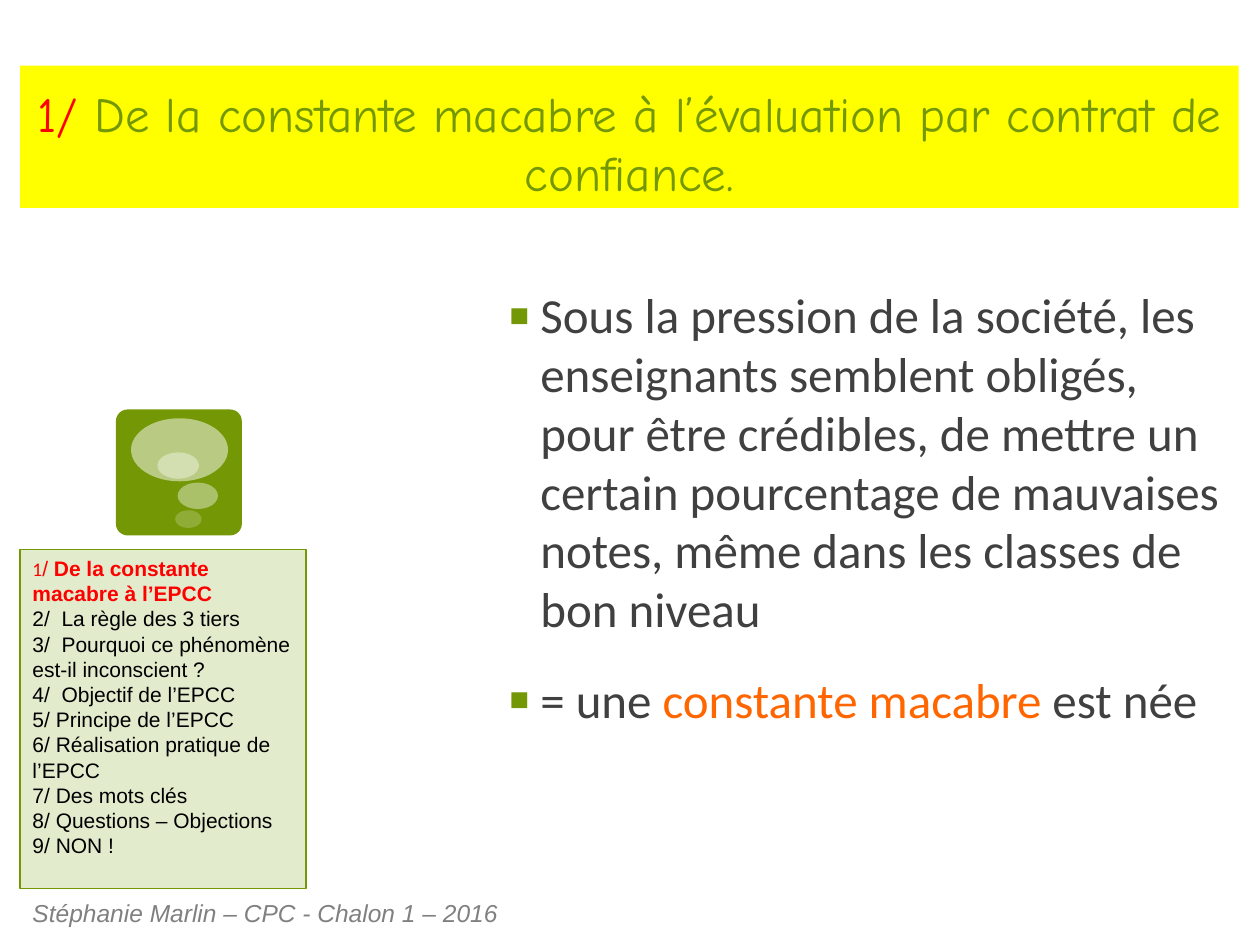
from dataclasses import dataclass

from lxml.etree import SubElement
from pptx import Presentation
from pptx.dml.color import RGBColor as RGB
from pptx.enum.shapes import MSO_SHAPE as Shape
from pptx.enum.text import MSO_ANCHOR as Anchor, MSO_AUTO_SIZE as AutoSize, PP_ALIGN as Align
from pptx.oxml.ns import qn
from pptx.util import Inches, Pt


@dataclass(frozen=True)
class Theme:
    green: RGB = RGB(0x74, 0x98, 0x05)
    pale_green: RGB = RGB(0xE3, 0xEB, 0xCD)
    yellow: RGB = RGB(0xFF, 0xFF, 0x00)
    red: RGB = RGB(0xFF, 0x00, 0x00)
    orange: RGB = RGB(0xFF, 0x66, 0x00)
    dark: RGB = RGB(0x40, 0x40, 0x40)
    grey: RGB = RGB(0x80, 0x80, 0x80)
    black: RGB = RGB(0, 0, 0)
    white: RGB = RGB(0xFF, 0xFF, 0xFF)
    title_font: str = "Comic Neue"
    body_font: str = "Calibri"
    small_font: str = "Arial"
    large: int = 28
    footer: int = 14
    agenda: int = 12
    agenda_number: int = 11


THEME = Theme()

AGENDA = [
    "2/  La règle des 3 tiers",
    "3/  Pourquoi ce phénomène est-il inconscient ?",
    "4/  Objectif de l’EPCC",
    "5/ Principe de l’EPCC",
    "6/ Réalisation pratique de l’EPCC",
    "7/ Des mots clés",
    "8/ Questions – Objections",
    "9/ NON !",
]
POINTS = [
    [("Sous la pression de la société, les enseignants semblent obligés, pour être "
      "crédibles, de mettre un certain pourcentage de mauvaises notes, même dans les "
      "classes de bon niveau", THEME.dark)],
    [("= une ", THEME.dark), ("constante macabre ", THEME.orange), ("est née", THEME.dark)],
]


def inches(box):
    return [Inches(length) for length in box]


def add_run(paragraph, text, font, size, color, bold=False, italic=False):
    run = paragraph.add_run()
    run.text = text
    run.font.name, run.font.size = font, Pt(size)
    run.font.bold, run.font.italic = bold, italic
    run.font.color.rgb = color


def paragraphs(frame, count):
    """Return the frame's first paragraph followed by new ones, count in all."""
    return [frame.paragraphs[0]] + [frame.add_paragraph() for _ in range(count - 1)]


def add_filled(slide, kind, box, color, opacity=100):
    shape = slide.shapes.add_shape(kind, *inches(box))
    shape.shadow.inherit = False
    shape.fill.solid()
    shape.fill.fore_color.rgb = color
    shape.line.fill.background()
    if opacity < 100:
        solid = shape.fill._xPr.find(qn("a:solidFill"))
        SubElement(solid[0], qn("a:alpha"), val=str(opacity * 1000))
    return shape


def add_bullet(paragraph, color):
    props = paragraph._p.get_or_add_pPr()
    props.set("marL", str(Inches(0.25)))
    props.set("indent", str(-Inches(0.25)))
    bullet_color = SubElement(props, qn("a:buClr"))
    SubElement(bullet_color, qn("a:srgbClr"), val=str(color))
    SubElement(props, qn("a:buSzPct"), val="130000")
    SubElement(props, qn("a:buFont"), typeface="Arial")
    SubElement(props, qn("a:buChar"), char="▪")


def place_title(slide, box):
    title = slide.shapes.title
    title.left, title.top, title.width, title.height = inches(box)
    title.fill.solid()
    title.fill.fore_color.rgb = THEME.yellow
    frame = title.text_frame
    frame.vertical_anchor = Anchor.BOTTOM
    frame.auto_size = AutoSize.NONE
    heading = frame.paragraphs[0]
    heading.alignment = Align.CENTER
    for text, color in [
        ("1/ ", THEME.red),
        ("De la constante macabre à l’évaluation par contrat de confiance.", THEME.green),
    ]:
        add_run(heading, text, THEME.title_font, THEME.large, color)


def add_bubble_icon(slide, box):
    left, top, side, _ = box
    tile = add_filled(slide, Shape.ROUNDED_RECTANGLE, box, THEME.green)
    tile.adjustments[0] = 0.093
    bubbles = [  # x, y, width, height as shares of the tile, then opacity
        (0.12, 0.07, 0.77, 0.5, 50),
        (0.49, 0.58, 0.32, 0.21, 40),
        (0.47, 0.8, 0.21, 0.14, 20),
        (0.33, 0.34, 0.33, 0.21, 38),
    ]
    for x, y, width, height, opacity in bubbles:
        bubble = (left + x * side, top + y * side, width * side, height * side)
        add_filled(slide, Shape.OVAL, bubble, THEME.white, opacity)


def add_points(slide, box):
    frame = slide.shapes.add_textbox(*inches(box)).text_frame
    frame.word_wrap = True
    for paragraph, parts in zip(paragraphs(frame, len(POINTS)), POINTS):
        paragraph.space_before = Pt(18)
        add_bullet(paragraph, THEME.green)
        for text, color in parts:
            add_run(paragraph, text, THEME.body_font, THEME.large, color)


def add_footer(slide, box):
    frame = slide.shapes.add_textbox(*inches(box)).text_frame
    frame.word_wrap = True
    add_run(frame.paragraphs[0], "Stéphanie Marlin – CPC - Chalon 1 – 2016",
            THEME.small_font, THEME.footer, THEME.grey, italic=True)


def add_agenda(slide, box):
    panel = add_filled(slide, Shape.RECTANGLE, box, THEME.pale_green)
    panel.line.color.rgb = THEME.green
    panel.line.width = Pt(0.75)
    frame = panel.text_frame
    frame.word_wrap = True
    frame.vertical_anchor = Anchor.TOP
    current, *others = paragraphs(frame, len(AGENDA) + 1)
    current.alignment = Align.LEFT
    add_run(current, "1", THEME.body_font, THEME.agenda_number, THEME.red)
    add_run(current, "/ ", THEME.small_font, THEME.agenda, THEME.red)
    add_run(current, "De la constante macabre à l’EPCC",
            THEME.small_font, THEME.agenda, THEME.red, bold=True)
    for paragraph, text in zip(others, AGENDA):
        paragraph.alignment = Align.LEFT
        add_run(paragraph, text, THEME.small_font, THEME.agenda, THEME.black)


def main():
    deck = Presentation()
    deck.slide_width, deck.slide_height = Inches(10), Inches(7.5)
    slide = deck.slides.add_slide(deck.slide_layouts[5])
    add_bubble_icon(slide, (0.92, 3.25, 1, 1))
    place_title(slide, (0.16, 0.52, 9.67, 1.13))
    add_points(slide, (3.94, 2.21, 5.89, 4.49))
    add_footer(slide, (0.16, 7.08, 4.23, 0.34))
    add_agenda(slide, (0.16, 4.36, 2.27, 2.69))
    deck.save("out.pptx")


if __name__ == "__main__":
    main()
